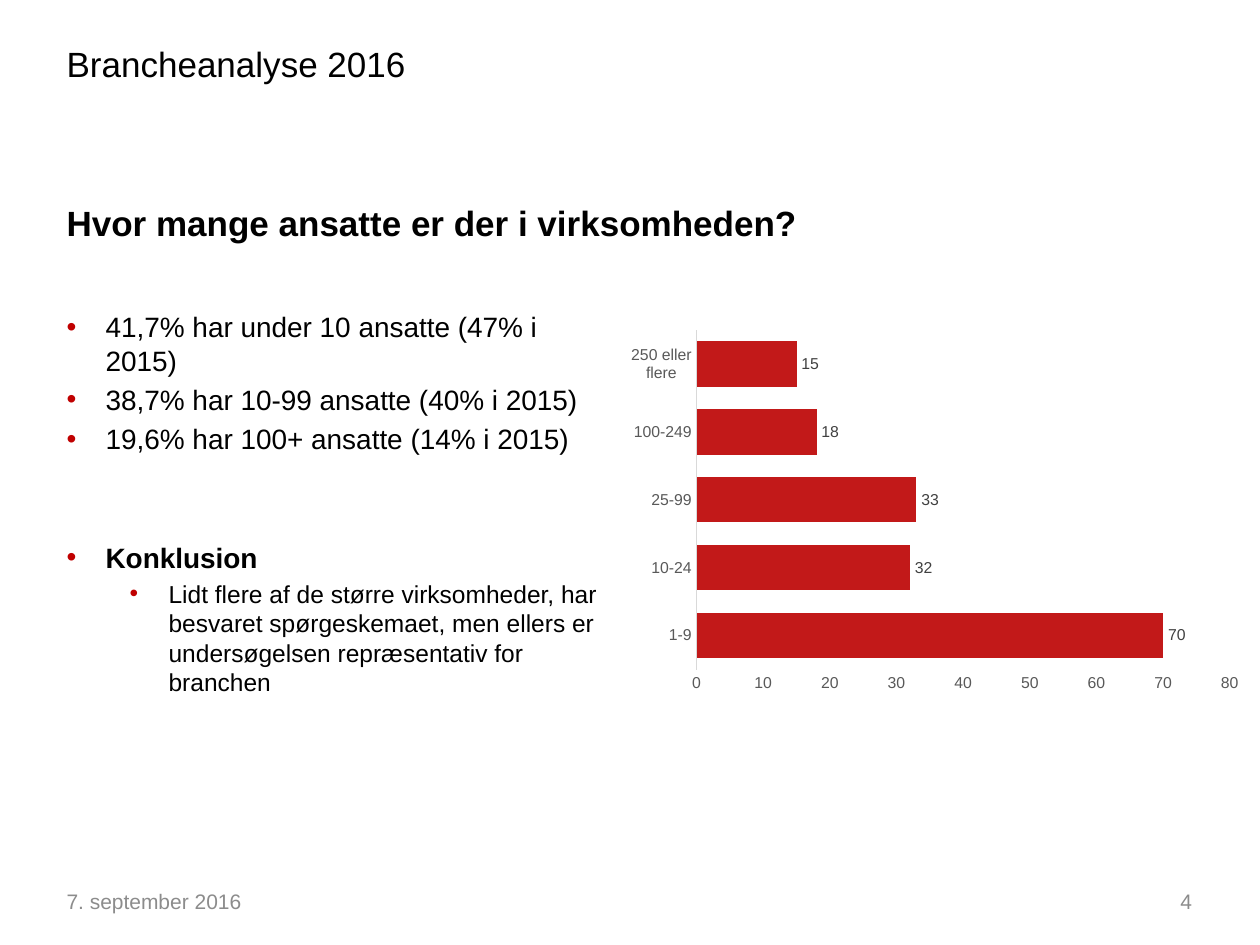
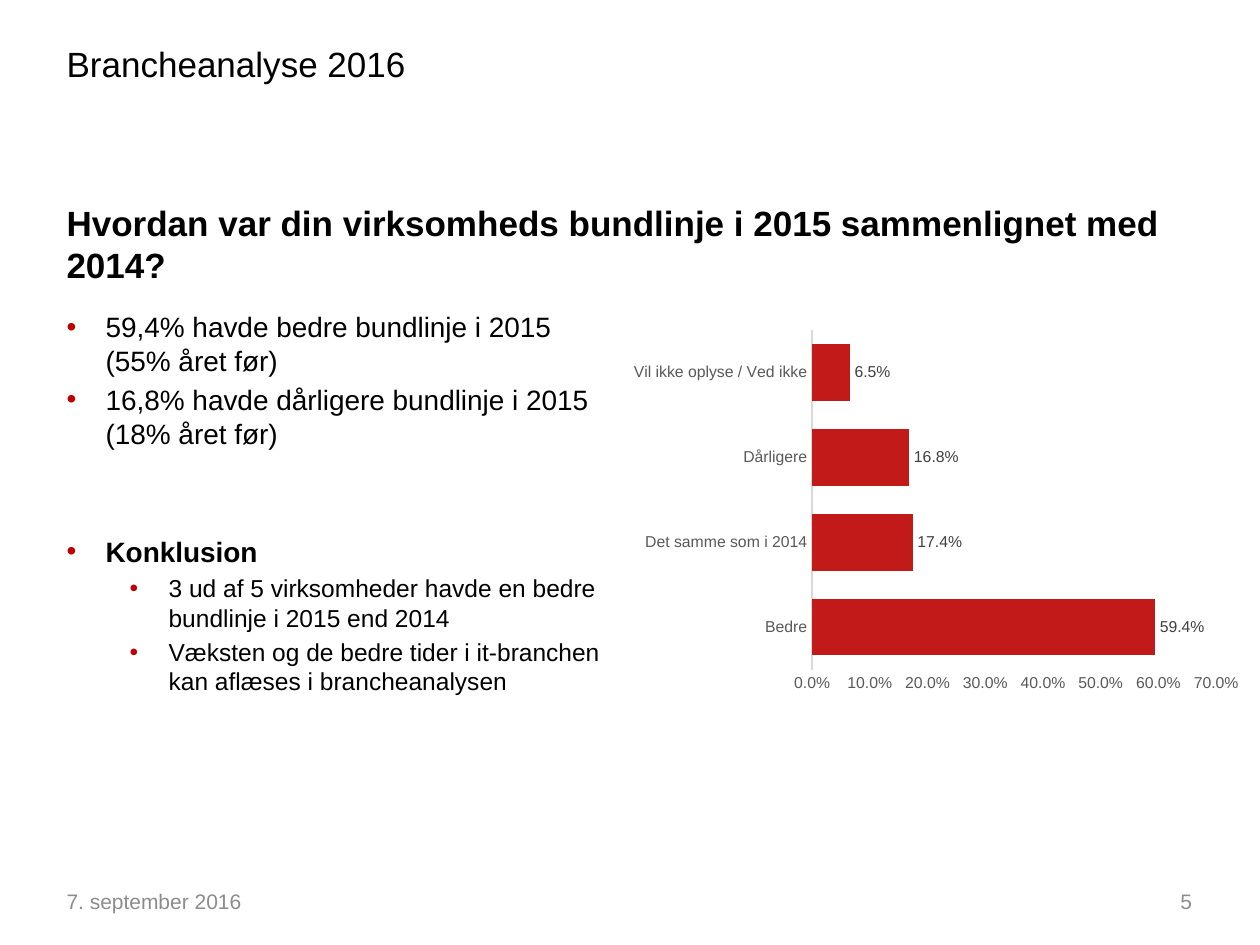
from lxml.etree import SubElement
from pptx import Presentation
from pptx.chart.data import CategoryChartData
from pptx.dml.color import RGBColor
from pptx.enum.chart import XL_CHART_TYPE as ChartType, XL_LABEL_POSITION as LabelPosition
from pptx.enum.chart import XL_TICK_MARK as TickMark
from pptx.enum.text import MSO_ANCHOR as Anchor, PP_ALIGN as Align
from pptx.oxml.ns import qn
from pptx.util import Inches, Pt

FONT = "Arial"
BLACK, FOOTER_GREY, BULLET_RED = "000000", "8C8C8C", "C00000"
BAR_RED, AXIS_TEXT, AXIS_LINE, LABEL_TEXT = "C21919", "595959", "D9D9D9", "404040"
LEFT = 0.43
FOOTER_TOP = 6.95
LEVELS = {0: (16, 0.31, 3.2), 1: (14, 0.81, 2.8)}
HANGING = 0.31
CONCLUSION = "Konklusion"
CONCLUSION_GAP = 48.5

QUESTIONS = [
    dict(
        number=4,
        question="Hvor mange ansatte er der i virksomheden?",
        findings=[
            "41,7% har under 10 ansatte (47% i 2015)",
            "38,7% har 10-99 ansatte (40% i 2015)",
            "19,6% har 100+ ansatte (14% i 2015)",
        ],
        conclusions=[
            "Lidt flere af de større virksomheder, har besvaret spørgeskemaet, "
            "men ellers er undersøgelsen repræsentativ for branchen",
        ],
        answers={"1-9": 70, "10-24": 32, "25-99": 33, "100-249": 18, "250 eller flere": 15},
        number_format="0",
        axis_max=80,
        axis_step=10,
    ),
    dict(
        number=5,
        question="Hvordan var din virksomheds bundlinje i 2015 sammenlignet med 2014?",
        findings=[
            "59,4% havde bedre bundlinje i 2015 (55% året før)",
            "16,8% havde dårligere bundlinje i 2015 (18% året før)",
        ],
        conclusions=[
            "3 ud af 5 virksomheder havde en bedre bundlinje i 2015 end 2014",
            "Væksten og de bedre tider i it-branchen kan aflæses i brancheanalysen",
        ],
        answers={
            "Bedre": 0.594,
            "Det samme som i 2014": 0.174,
            "Dårligere": 0.168,
            "Vil ikke oplyse / Ved ikke": 0.065,
        },
        number_format="0.0%",
        axis_max=0.7,
        axis_step=0.1,
    ),
]


def rgb(value):
    """Turn a hex string into a colour."""
    return RGBColor.from_string(value)


def style_font(font, size, color=BLACK, bold=False):
    """Apply the shared typeface with a size, colour and weight."""
    font.name, font.size, font.bold = FONT, Pt(size), bold
    font.color.rgb = rgb(color)


def add_frame(slide, box):
    """Add a wrapping text box and return its text frame."""
    frame = slide.shapes.add_textbox(*map(Inches, box)).text_frame
    frame.word_wrap = True
    return frame


def add_line(slide, box, text, size, color=BLACK, bold=False, anchor=Anchor.TOP, align=Align.LEFT):
    """Add a text box holding one paragraph."""
    frame = add_frame(slide, box)
    frame.vertical_anchor = anchor
    frame.text = text
    paragraph = frame.paragraphs[0]
    paragraph.alignment = align
    style_font(paragraph.runs[0].font, size, color, bold)


def add_header_and_footer(slide, number):
    """Add the report name, date and page number."""
    add_line(slide, (LEFT, 0.29, 3.17, 0.4), "Brancheanalyse 2016", 20)
    for left, text, align in (
        (LEFT, "7. september 2016", Align.LEFT),
        (7.23, str(number), Align.RIGHT),
    ):
        add_line(slide, (left, FOOTER_TOP, 2.33, 0.4), text, 12, FOOTER_GREY,
                 anchor=Anchor.MIDDLE, align=align)


def set_bullet(paragraph, indent):
    """Give a paragraph a red bullet with a hanging indent."""
    properties = paragraph._p.get_or_add_pPr()
    properties.set("marL", str(Inches(indent)))
    properties.set("indent", str(-Inches(HANGING)))
    bullet_color = SubElement(properties, qn("a:buClr"))
    SubElement(bullet_color, qn("a:srgbClr"), val=BULLET_RED)
    SubElement(properties, qn("a:buFont"), typeface=FONT)
    SubElement(properties, qn("a:buChar"), char="•")


def add_findings(slide, box, findings, conclusions):
    """List the findings, then the conclusion with its points."""
    frame = add_frame(slide, box)
    items = [(text, 0) for text in findings + [CONCLUSION]]
    items += [(text, 1) for text in conclusions]
    for position, (text, level) in enumerate(items):
        paragraph = frame.add_paragraph() if position else frame.paragraphs[0]
        paragraph.text = text
        paragraph.level = level
        size, indent, gap = LEVELS[level]
        set_bullet(paragraph, indent)
        is_conclusion = text == CONCLUSION
        if position:
            paragraph.space_before = Pt(CONCLUSION_GAP if is_conclusion else gap)
        style_font(paragraph.runs[0].font, size, bold=is_conclusion)


def style_axis(axis):
    """Remove gridlines and tick marks and set the label font."""
    axis.has_major_gridlines = False
    axis.major_tick_mark = axis.minor_tick_mark = TickMark.NONE
    style_font(axis.tick_labels.font, 9, AXIS_TEXT)


def add_answer_chart(slide, box, answers, number_format, axis_max, axis_step):
    """Add the bar chart of the answers."""
    data = CategoryChartData(number_format=number_format)
    data.categories = list(answers)
    data.add_series("Series 1", list(answers.values()))
    chart = slide.shapes.add_chart(ChartType.BAR_CLUSTERED, *map(Inches, box), data).chart
    chart.has_legend = chart.has_title = False
    style_font(chart.font, 10)

    answer_axis, value_axis = chart.category_axis, chart.value_axis
    style_axis(answer_axis)
    style_axis(value_axis)
    answer_axis.format.line.color.rgb = rgb(AXIS_LINE)
    answer_axis.format.line.width = Pt(0.75)
    value_axis.format.line.fill.background()
    value_axis.minimum_scale, value_axis.maximum_scale = 0, axis_max
    value_axis.major_unit = axis_step
    value_axis.tick_labels.number_format = number_format
    value_axis.tick_labels.number_format_is_linked = False

    plot = chart.plots[0]
    plot.gap_width = 50
    plot.vary_by_categories = False
    bars = plot.series[0]
    bars.format.fill.solid()
    bars.format.fill.fore_color.rgb = rgb(BAR_RED)
    labels = bars.data_labels
    labels.show_value = True
    labels.position = LabelPosition.OUTSIDE_END
    labels.number_format = number_format
    labels.number_format_is_linked = False
    style_font(labels.font, 9, LABEL_TEXT)


def add_question_slide(deck, number, question, findings, conclusions, **chart_options):
    """Build one survey question slide."""
    slide = deck.slides.add_slide(deck.slide_layouts[6])
    add_header_and_footer(slide, number)
    add_line(slide, (LEFT, 1.55, 9, 0.55), question, 20, bold=True)
    add_findings(slide, (LEFT, 2.41, 4.49, 3.54), findings, conclusions)
    add_answer_chart(slide, (4.93, 2.56, 5, 3), **chart_options)


def main():
    """Build and save the deck."""
    deck = Presentation()
    deck.slide_width, deck.slide_height = Inches(10), Inches(7.5)
    for question in QUESTIONS:
        add_question_slide(deck, **question)
    deck.save("out.pptx")


if __name__ == "__main__":
    main()
